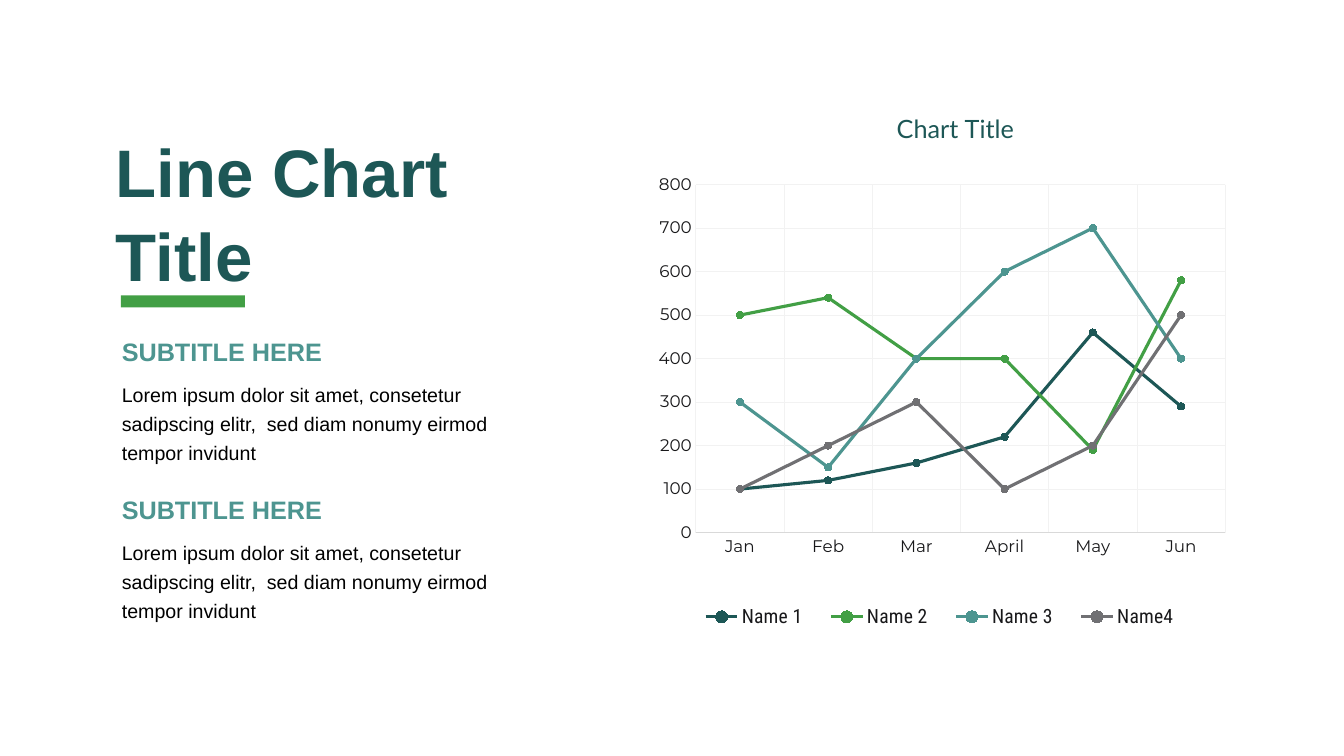
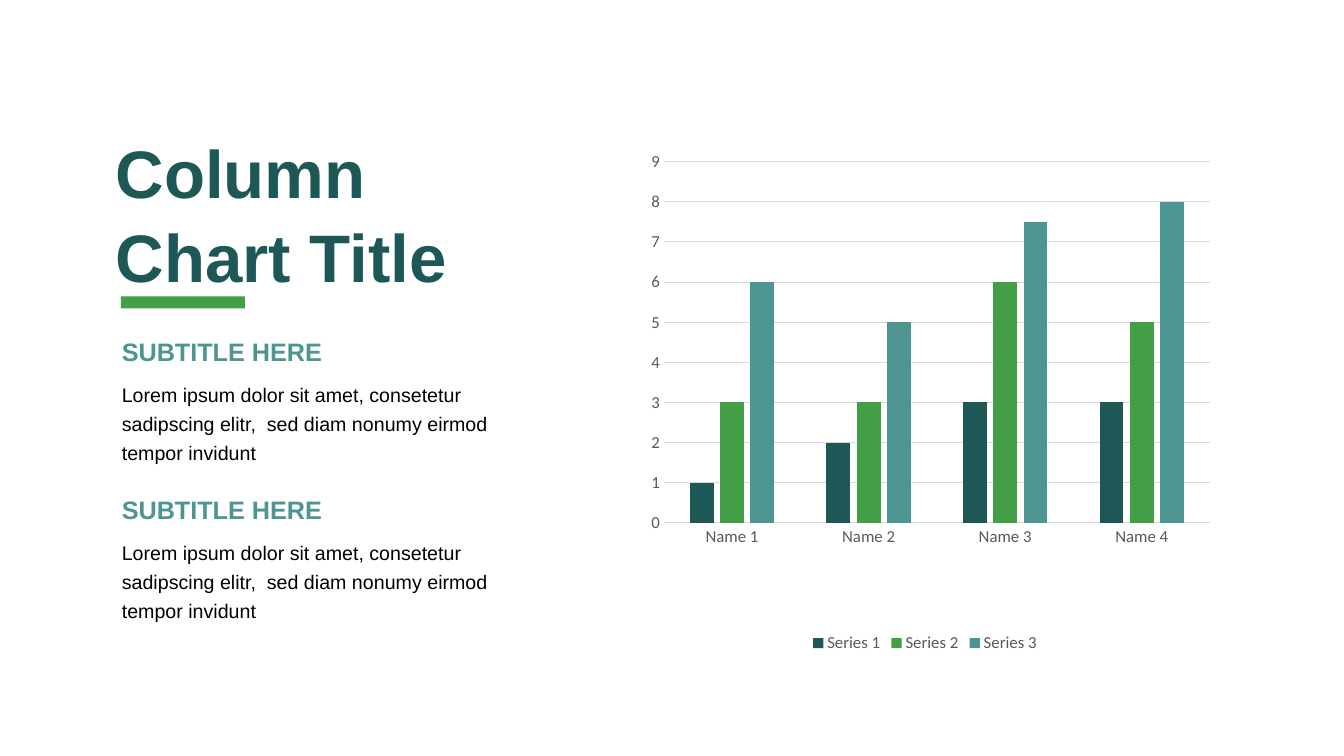
from lxml.etree import SubElement
from pptx import Presentation
from pptx.chart.data import CategoryChartData
from pptx.dml.color import RGBColor
from pptx.enum.chart import XL_CHART_TYPE, XL_LEGEND_POSITION, XL_MARKER_STYLE, XL_TICK_MARK
from pptx.enum.shapes import MSO_SHAPE
from pptx.enum.text import MSO_AUTO_SIZE
from pptx.oxml.ns import qn
from pptx.util import Pt

EMU_PER_PX = 9144
PINE = RGBColor(0x1D, 0x57, 0x56)
GREEN = RGBColor(0x42, 0x9F, 0x45)
TEAL = RGBColor(0x4D, 0x95, 0x90)
GRAY = RGBColor(0x70, 0x70, 0x73)
INK = RGBColor(0x18, 0x18, 0x1A)
LABEL = RGBColor(0x59, 0x59, 0x59)
RULE = RGBColor(0xD9, 0xD9, 0xD9)
PALE = RGBColor(0xF2, 0xF2, 0xF2)
BLACK = RGBColor(0, 0, 0)
SERIES_COLORS = [PINE, GREEN, TEAL, GRAY]
SUBTITLE = "SUBTITLE HERE"
BODY = (
    "Lorem ipsum dolor sit amet, consetetur sadipscing elitr,  "
    "sed diam nonumy eirmod tempor invidunt"
)


def px(*lengths):
    """Turn pixel lengths into EMU."""
    return [length * EMU_PER_PX for length in lengths]


def style_font(font, name, size, color, bold=False):
    """Set the face, size, colour and weight of a font."""
    font.name = name
    font.size = Pt(size)
    font.bold = bold
    font.color.rgb = color


def add_text(page, text, *, at, size, color, bold=False, spacing=1.0):
    """Add a wrapped text box with one paragraph per line of text."""
    frame = page.shapes.add_textbox(*px(*at)).text_frame
    frame.word_wrap = True
    frame.auto_size = MSO_AUTO_SIZE.SHAPE_TO_FIT_TEXT
    frame.text = text
    for para in frame.paragraphs:
        para.line_spacing = spacing
        for span in para.runs:
            style_font(span.font, "Arial", size, color, bold)


def add_accent(page, top):
    """Add the green bar under the title."""
    bar = page.shapes.add_shape(MSO_SHAPE.RECTANGLE, *px(120, top, 123, 12))
    bar.shadow.inherit = False
    bar.fill.solid()
    bar.fill.fore_color.rgb = GREEN
    bar.line.fill.background()


def add_text_column(page, title, top):
    """Add the title, its accent and the two subtitled paragraphs."""
    add_text(page, title, at=(105, top, 537, 172), size=48, color=PINE, bold=True, spacing=1.05)
    add_accent(page, top + 173)
    for block_top in (329, 486):
        add_text(page, SUBTITLE, at=(111, block_top, 332, 40), size=18, color=TEAL, bold=True)
        add_text(page, BODY, at=(111, block_top + 40, 409, 92), size=14, color=BLACK, spacing=1.24)


def place_part(part, index, **edges):
    """Give a chart part a manual layout in fractions of the chart."""
    for old in part.findall(qn("c:layout")):
        part.remove(old)
    layout = part.makeelement(qn("c:layout"))
    part.insert(index, layout)
    manual = SubElement(layout, qn("c:manualLayout"))
    if part.tag == qn("c:plotArea"):
        SubElement(manual, qn("c:layoutTarget")).set("val", "inner")
    for edge in ("x", "y"):
        SubElement(manual, qn(f"c:{edge}Mode")).set("val", "edge")
    for edge, value in edges.items():
        SubElement(manual, qn(f"c:{edge}")).set("val", str(value))


def style_line(line, color, width):
    """Set the colour and width of a line."""
    line.color.rgb = color
    line.width = Pt(width)


def style_axis(axis, font_name, color):
    """Set the labels of an axis and drop its tick marks."""
    axis.major_tick_mark = XL_TICK_MARK.NONE
    axis.minor_tick_mark = XL_TICK_MARK.NONE
    style_font(axis.tick_labels.font, font_name, 12, color)


def style_grid(axis, color, width):
    """Show the major gridlines of an axis."""
    axis.has_major_gridlines = True
    style_line(axis.major_gridlines.format.line, color, width)


def add_chart(page, kind, categories, series, *, at, plot, top_value, step, font_name, color, grid):
    """Add a chart with its axes and plot area set."""
    data = CategoryChartData()
    data.categories = categories
    for name, values in series.items():
        data.add_series(name, values)
    chart = page.shapes.add_chart(kind, *px(*at), data).chart
    style_font(chart.font, "Calibri", 10, BLACK)
    chart.has_title = False
    place_part(chart.plots[0]._element.getparent(), 0, **plot)
    for axis in (chart.category_axis, chart.value_axis):
        style_axis(axis, font_name, color)
    style_line(chart.category_axis.format.line, RULE, 0.75)
    chart.value_axis.format.line.fill.background()
    chart.value_axis.minimum_scale = 0
    chart.value_axis.maximum_scale = top_value
    chart.value_axis.major_unit = step
    style_grid(chart.value_axis, *grid)
    chart.plots[0].vary_by_categories = False
    return chart


def add_legend(chart, font_name, size, color):
    """Show the legend below the plot."""
    chart.has_legend = True
    chart.legend.position = XL_LEGEND_POSITION.BOTTOM
    chart.legend.include_in_layout = False
    style_font(chart.legend.font, font_name, size, color)


def add_chart_title(chart, text):
    """Add a title above the plot."""
    chart.has_title = True
    chart.chart_title.text_frame.text = text
    span = chart.chart_title.text_frame.paragraphs[0].runs[0]
    style_font(span.font, "Lato", 18, PINE)
    place_part(chart.chart_title._element, 1, x=0.42, y=0.02)


def build_line_page(page):
    """Fill the line chart slide."""
    grid = (PALE, 0.5)
    chart = add_chart(
        page,
        XL_CHART_TYPE.LINE_MARKERS,
        ["Jan", "Feb", "Mar", "April", "May", "Jun"],
        {
            "Name 1": [100, 120, 160, 220, 460, 290],
            "Name 2": [500, 540, 400, 400, 190, 580],
            "Name 3": [300, 150, 400, 600, 700, 400],
            "Name4": [100, 200, 300, 100, 200, 500],
        },
        at=(637, 94, 590, 557),
        plot={"x": 0.09, "y": 0.16, "w": 0.89, "h": 0.62},
        top_value=800,
        step=100,
        font_name="Montserrat",
        color=INK,
        grid=grid,
    )
    style_grid(chart.category_axis, *grid)
    for line, color in zip(chart.plots[0].series, SERIES_COLORS):
        line.smooth = False
        style_line(line.format.line, color, 2.25)
        line.marker.style = XL_MARKER_STYLE.CIRCLE
        line.marker.size = 5
        line.marker.format.fill.solid()
        line.marker.format.fill.fore_color.rgb = color
        style_line(line.marker.format.line, color, 0.75)
    add_chart_title(chart, "Chart Title")
    add_legend(chart, "Roboto Condensed", 14, INK)
    place_part(chart.legend._element, 1, x=0.07, y=0.89, w=0.86, h=0.08)
    add_text_column(page, "Line Chart\nTitle", 120)


def build_column_page(page):
    """Fill the column chart slide."""
    chart = add_chart(
        page,
        XL_CHART_TYPE.COLUMN_CLUSTERED,
        [f"Name {number}" for number in range(1, 5)],
        {"Series 1": [1, 2, 3, 3], "Series 2": [3, 3, 6, 5], "Series 3": [6, 5, 7.5, 8]},
        at=(623, 140, 589, 512),
        plot={"x": 0.06, "y": 0.04, "w": 0.92, "h": 0.7},
        top_value=9,
        step=1,
        font_name="Calibri",
        color=LABEL,
        grid=(RULE, 0.75),
    )
    chart.plots[0].gap_width = 219
    chart.plots[0].overlap = -27
    for columns, color in zip(chart.plots[0].series, SERIES_COLORS):
        columns.format.fill.solid()
        columns.format.fill.fore_color.rgb = color
    add_legend(chart, "Calibri", 12, LABEL)
    add_text_column(page, "Column\nChart Title", 121)


def main():
    """Build and save the deck."""
    deck = Presentation()
    deck.slide_width, deck.slide_height = px(1333, 750)
    for build in (build_line_page, build_column_page):
        build(deck.slides.add_slide(deck.slide_layouts[6]))
    deck.save("out.pptx")


if __name__ == "__main__":
    main()
